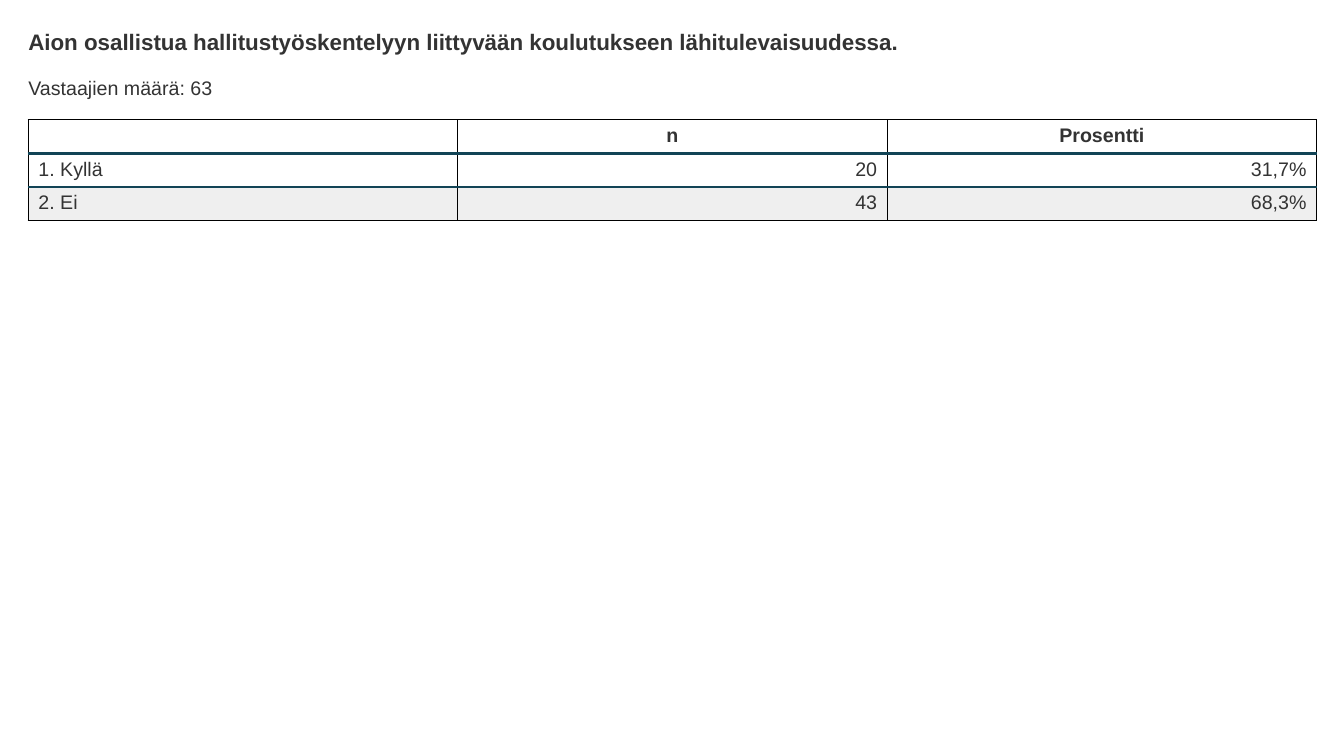
from dataclasses import dataclass

from lxml import etree
from pptx import Presentation
from pptx import util as u
from pptx.dml.color import RGBColor
from pptx.enum import text
from pptx.oxml import ns

PX = 9525  # EMU, 96 px to the inch


@dataclass(frozen=True)
class Theme:
    font: str = "Arial"
    ink: str = "333333"
    rule: str = "124456"
    edge: str = "000000"
    paper: str = "FFFFFF"
    band: str = "EFEFEF"
    title_pt: int = 16
    body_pt: int = 14
    rule_pt: int = 2
    edge_pt: int = 1


THEME = Theme()
LEFT, CENTER, RIGHT = text.PP_ALIGN.LEFT, text.PP_ALIGN.CENTER, text.PP_ALIGN.RIGHT
ROWS = [
    ("", "n", "Prosentti"),
    ("1. Kyllä", "20", "31,7%"),
    ("2. Ei", "43", "68,3%"),
]


def px(*lengths):
    return [u.Emu(n * PX) for n in lengths]


def write(tf, words, size, bold=False, align=LEFT):
    p = tf.paragraphs[0]
    p.alignment = align
    if not words:
        # An empty cell keeps the height of the body type.
        etree.SubElement(p._p, ns.qn("a:endParaRPr"), sz=str(size * 100))
        return
    r = p.add_run()
    r.text = words
    r.font.name = THEME.font
    r.font.size = u.Pt(size)
    r.font.bold = bold
    r.font.color.rgb = RGBColor.from_string(THEME.ink)


def fit_line(sp, box, words, size, bold=False):
    """Place a text shape without margins and write one line in it."""
    sp.left, sp.top, sp.width, sp.height = px(*box)
    tf = sp.text_frame
    tf.word_wrap = True
    tf.auto_size = text.MSO_AUTO_SIZE.SHAPE_TO_FIT_TEXT
    tf.vertical_anchor = text.MSO_ANCHOR.TOP
    tf.margin_left = tf.margin_top = tf.margin_right = tf.margin_bottom = 0
    write(tf, words, size, bold)


def set_border(cell, side, color, points):
    ln = etree.SubElement(cell._tc.get_or_add_tcPr(), ns.qn(f"a:ln{side}"),
                          w=str(u.Pt(points)))
    fill = etree.SubElement(ln, ns.qn("a:solidFill"))
    etree.SubElement(fill, ns.qn("a:srgbClr"), val=color)


def add_answer_table(slide, box):
    last = len(ROWS) - 1
    table = slide.shapes.add_table(len(ROWS), len(ROWS[0]), *px(*box)).table
    table.first_row = table.horz_banding = False
    for i, row in enumerate(ROWS):
        for j, words in enumerate(row):
            cell = table.cell(i, j)
            for side in "LRTB":
                inner = (side == "T" and i > 0) or (side == "B" and i < last)
                if inner:
                    set_border(cell, side, THEME.rule, THEME.rule_pt)
                else:
                    set_border(cell, side, THEME.edge, THEME.edge_pt)
            cell.fill.solid()
            cell.fill.fore_color.rgb = RGBColor.from_string(
                THEME.band if i == 2 else THEME.paper)
            align = LEFT if j == 0 else CENTER if i == 0 else RIGHT
            write(cell.text_frame, words, THEME.body_pt, i == 0, align)


def add_question_slide(prs, box):
    x, y, w = box
    slide = prs.slides.add_slide(prs.slide_layouts[5])
    fit_line(slide.shapes.title, (x, y, w, 26),
             "Aion osallistua hallitustyöskentelyyn liittyvään koulutukseen "
             "lähitulevaisuudessa.", THEME.title_pt, True)
    count_box = (x, y + 45, w, 22)
    fit_line(slide.shapes.add_textbox(*px(*count_box)), count_box,
             "Vastaajien määrä: 63", THEME.body_pt)
    add_answer_table(slide, (x, y + 87, w, 96))


def main():
    prs = Presentation()
    prs.slide_width, prs.slide_height = px(1280, 720)
    add_question_slide(prs, (27, 27, 1227))
    prs.save("out.pptx")


if __name__ == "__main__":
    main()
